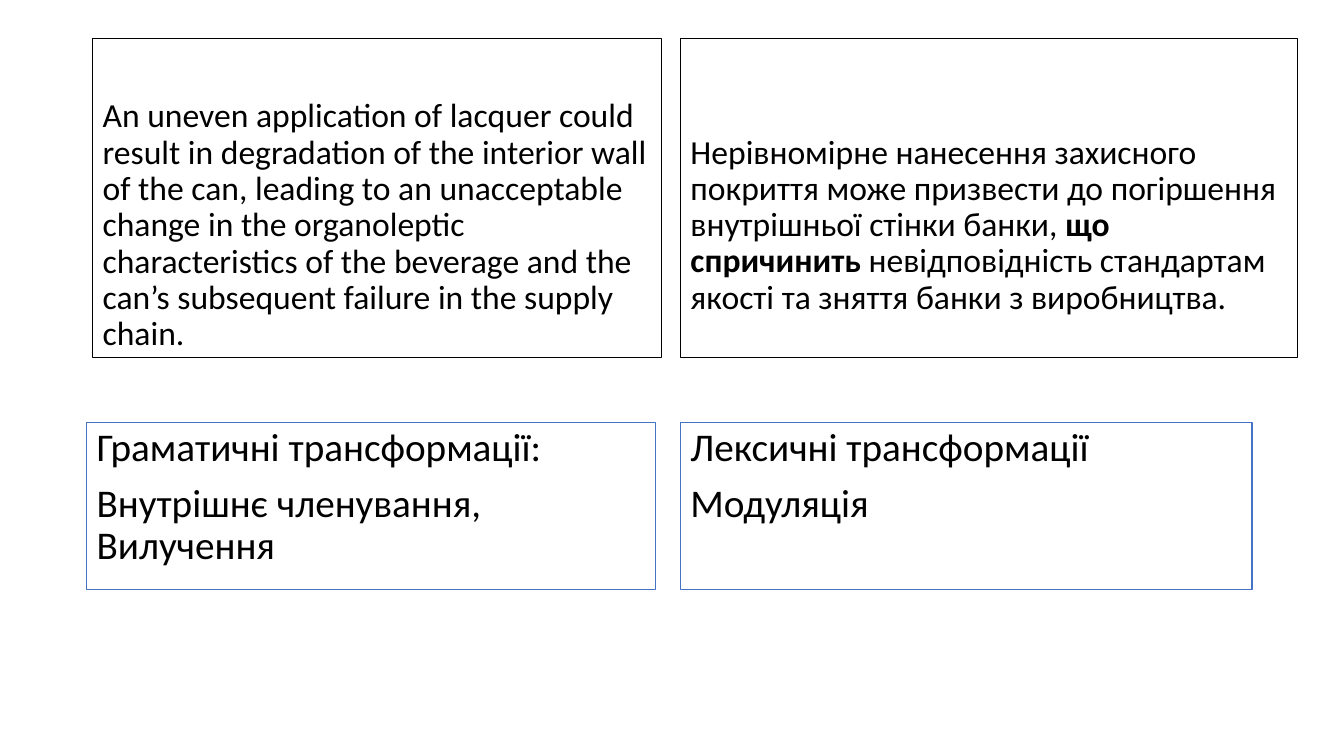
from dataclasses import dataclass

from pptx import Presentation
from pptx.dml.color import RGBColor
from pptx.enum import shapes, text
from pptx.util import Inches, Pt


@dataclass(frozen=True)
class Theme:
    font: str = "Calibri"
    ink: RGBColor = RGBColor(0x00, 0x00, 0x00)
    paper: RGBColor = RGBColor(0xFF, 0xFF, 0xFF)
    accent: RGBColor = RGBColor(0x44, 0x72, 0xC4)
    passage_size: int = 24
    analysis_size: int = 28


@dataclass(frozen=True)
class Phrase:
    words: str
    bold: bool = False


@dataclass(frozen=True)
class Panel:
    left: float
    width: float
    paragraphs: list[list[Phrase]]
    bottom_inset: float = 0.05


@dataclass(frozen=True)
class Row:
    top: float
    height: float
    outline: RGBColor
    size: int
    anchor: text.MSO_ANCHOR
    panels: list[Panel]


THEME = Theme()
RIGHT_COLUMN = 6.75

# Passage and its translation
PASSAGES = Row(0.38, 3.17, THEME.ink, THEME.passage_size, text.MSO_ANCHOR.BOTTOM, [
    Panel(0.92, 5.64, [[Phrase(
        "An uneven application of lacquer could result in degradation of the "
        "interior wall of the can, leading to an unacceptable change in the "
        "organoleptic characteristics of the beverage and the can’s subsequent "
        "failure in the supply chain.")]]),
    Panel(RIGHT_COLUMN, 6.12, [[
        Phrase("Нерівномірне нанесення захисного покриття може призвести до "
               "погіршення внутрішньої стінки банки, "),
        Phrase("що спричинить ", bold=True),
        Phrase("невідповідність стандартам якості та зняття банки з виробництва."),
    ]], bottom_inset=0.41),
])

# Transformations used in the translation
ANALYSIS = Row(4.19, 1.66, THEME.accent, THEME.analysis_size, text.MSO_ANCHOR.TOP, [
    Panel(0.86, 5.64, [[Phrase("Граматичні трансформації:")],
                       [Phrase("Внутрішнє членування, Вилучення")]]),
    Panel(RIGHT_COLUMN, 5.67, [[Phrase("Лексичні трансформації")],
                               [Phrase("Модуляція")]]),
])


def draw_panel(slide, row: Row, panel: Panel) -> None:
    box = slide.shapes.add_shape(
        shapes.MSO_SHAPE.RECTANGLE, Inches(panel.left), Inches(row.top),
        Inches(panel.width), Inches(row.height))
    box.shadow.inherit = False
    box.fill.solid()
    box.fill.fore_color.rgb = THEME.paper
    box.line.color.rgb = row.outline
    box.line.width = Pt(1)

    frame = box.text_frame
    frame_format = {"word_wrap": True, "vertical_anchor": row.anchor,
                    "margin_bottom": Inches(panel.bottom_inset)}
    for name, value in frame_format.items():
        setattr(frame, name, value)

    for index, phrases in enumerate(panel.paragraphs):
        paragraph = frame.add_paragraph() if index else frame.paragraphs[0]
        paragraph_format = {"alignment": text.PP_ALIGN.LEFT, "line_spacing": 0.9,
                            "space_before": Pt(10 if index else 0)}
        for name, value in paragraph_format.items():
            setattr(paragraph, name, value)
        for phrase in phrases:
            run = paragraph.add_run()
            run.text = phrase.words
            run_format = {"name": THEME.font, "size": Pt(row.size), "bold": phrase.bold}
            for name, value in run_format.items():
                setattr(run.font, name, value)
            run.font.color.rgb = THEME.ink


def main() -> None:
    deck = Presentation()
    deck.slide_width, deck.slide_height = Inches(13.33), Inches(7.5)
    slide = deck.slides.add_slide(deck.slide_layouts[6])
    for row in (PASSAGES, ANALYSIS):
        for panel in row.panels:
            draw_panel(slide, row, panel)
    deck.save("out.pptx")


if __name__ == "__main__":
    main()
